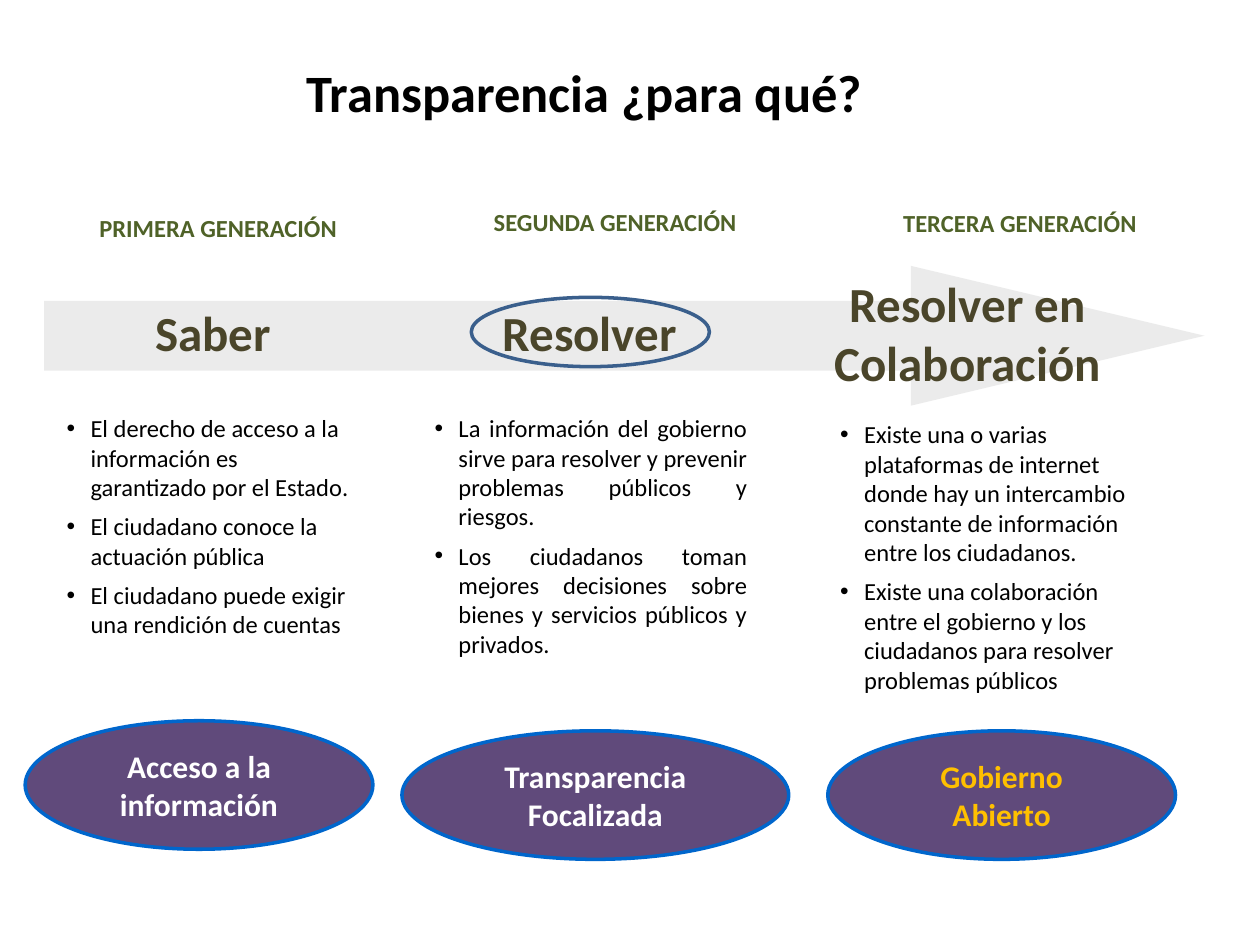
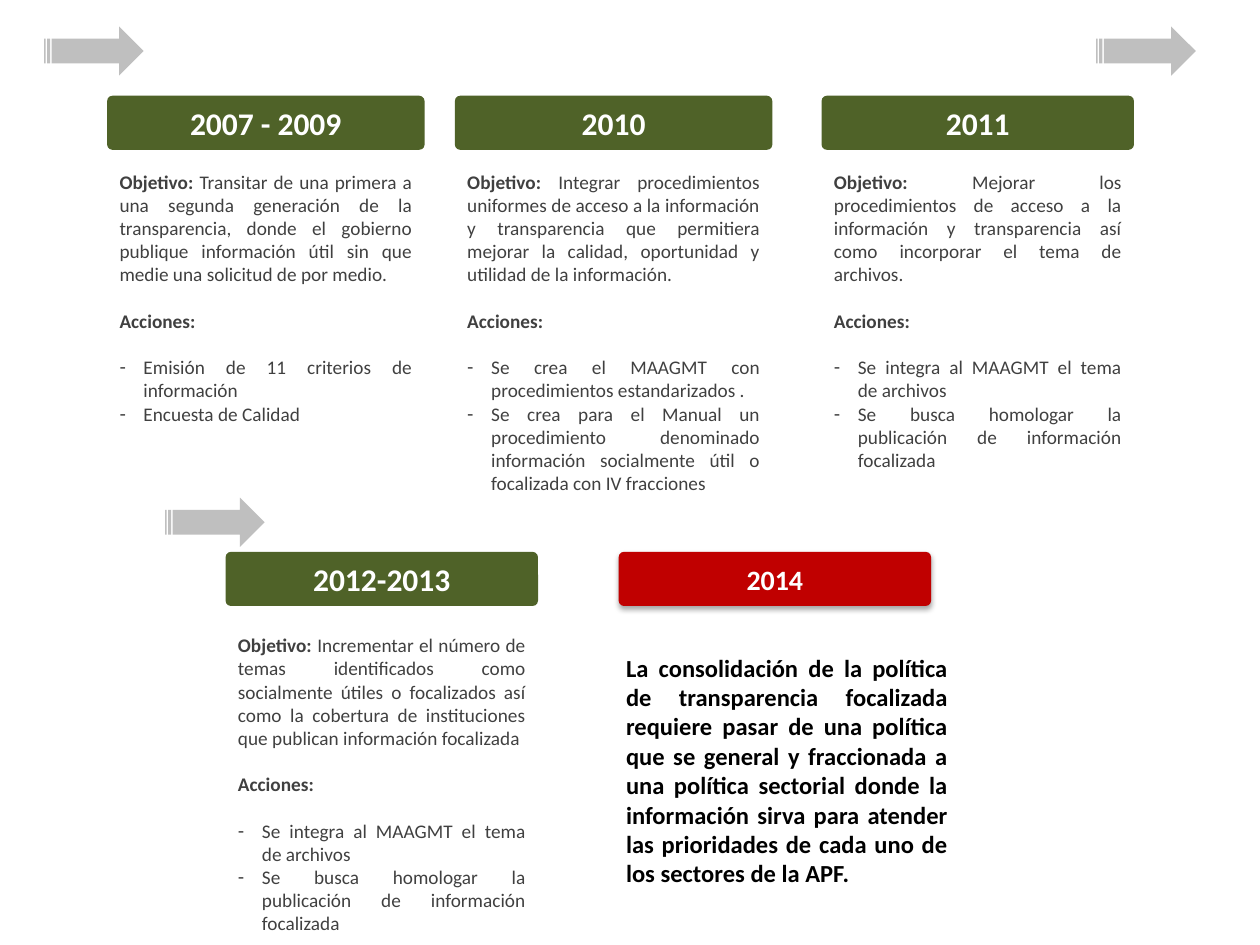
from lxml import etree
from pptx import Presentation
from pptx.dml.color import RGBColor
from pptx.enum.shapes import MSO_SHAPE
from pptx.enum.text import MSO_ANCHOR, PP_ALIGN
from pptx.oxml.ns import qn
from pptx.util import Inches, Pt

LEFT, MID, JUST = PP_ALIGN.LEFT, PP_ALIGN.CENTER, PP_ALIGN.JUSTIFY
TOP, CORE = MSO_ANCHOR.TOP, MSO_ANCHOR.MIDDLE
ARROW, STRIPED = MSO_SHAPE.RIGHT_ARROW, MSO_SHAPE.STRIPED_RIGHT_ARROW
OVAL, ROUND = MSO_SHAPE.OVAL, MSO_SHAPE.ROUNDED_RECTANGLE

FONT = "Calibri"
BLACK = RGBColor(0x00, 0x00, 0x00)
WHITE = RGBColor(0xFF, 0xFF, 0xFF)
GOLD = RGBColor(0xFF, 0xC0, 0x00)
GREEN = RGBColor(0x4F, 0x62, 0x28)
RED = RGBColor(0xC0, 0x00, 0x00)
PURPLE = RGBColor(0x60, 0x4A, 0x7B)
BLUE = RGBColor(0x00, 0x66, 0xCC)
NAVY = RGBColor(0x3A, 0x5F, 0x8C)
BROWN = RGBColor(0x4A, 0x45, 0x2A)
DARK = RGBColor(0x40, 0x40, 0x40)
SILVER = RGBColor(0xC0, 0xC0, 0xC0)
GREY = RGBColor(0xBF, 0xBF, 0xBF)

HANG = Inches(0.19)
LINE = 13.4

STAGES = [
    dict(label=("PRIMERA GENERACIÓN", (0.69, 1.64, 2.26, 0.48)),
         verb=("Saber", 0.51),
         notes=(["El derecho de acceso a la información es garantizado por el Estado.",
                 "El ciudadano conoce la actuación pública",
                 "El ciudadano puede exigir una rendición de cuentas"],
                (0.43, 3.23, 2.52, 1.26), LEFT),
         goal=("Acceso a la información", (0.2, 5.72, 2.76, 1.02), WHITE)),
    dict(label=("SEGUNDA GENERACIÓN", (3.82, 1.59, 2.26, 0.48)),
         verb=("Resolver", 3.5),
         notes=(["La información del gobierno sirve para resolver y prevenir "
                 "problemas públicos y riesgos.",
                 "Los ciudadanos toman mejores decisiones sobre bienes y "
                 "servicios públicos y privados."],
                (3.35, 3.23, 2.68, 1.26), JUST),
         goal=("Transparencia Focalizada", (3.19, 5.8, 3.07, 1.02), WHITE)),
    dict(label=("TERCERA GENERACIÓN", (7.07, 1.6, 2.26, 0.48)),
         verb=("Resolver en\nColaboración", 6.5),
         notes=(["Existe una o varias plataformas de internet donde hay un "
                 "intercambio constante de información entre los ciudadanos.",
                 "Existe una colaboración entre el gobierno y los ciudadanos "
                 "para resolver problemas públicos"],
                (6.57, 3.28, 2.64, 1.26), LEFT),
         goal=("Gobierno Abierto", (6.57, 5.8, 2.76, 1.02), GOLD)),
]

MERGE = ["Se integra al MAAGMT el tema de archivos",
         "Se busca homologar la publicación de información focalizada"]
YEARS = [
    ("2007 - 2009", (0.85, 0.76, 2.52, 2.65),
     "Transitar de una primera a una segunda generación de la transparencia, donde el "
     "gobierno publique información útil sin que medie una solicitud de por medio.",
     ["Emisión de 11 criterios de información", "Encuesta de Calidad"]),
    ("2010", (3.61, 0.76, 2.52, 3.25),
     "Integrar procedimientos uniformes de acceso a la información y transparencia que "
     "permitiera mejorar la calidad, oportunidad y utilidad de la información.",
     ["Se crea el MAAGMT con procedimientos estandarizados .",
      "Se crea para el Manual un procedimiento denominado información socialmente "
      "útil o focalizada con IV fracciones"]),
    ("2011", (6.52, 0.76, 2.48, 3.05),
     "Mejorar los procedimientos de acceso a la información y transparencia así como "
     "incorporar el tema de archivos.", MERGE),
    ("2012-2013", (1.79, 4.38, 2.48, 3.1),
     "Incrementar el número de temas identificados como socialmente útiles o focalizados "
     "así como la cobertura de instituciones que publican información focalizada", MERGE),
]
CLOSING = ("La consolidación de la política de transparencia focalizada requiere pasar de una "
           "política que se general y fraccionada a una política sectorial donde la "
           "información sirva para atender las prioridades de cada uno de los sectores de la APF.")


def place(box):
    """Turn a box in inches into lengths."""
    return [Inches(v) for v in box]


def draw(slide, kind, box, fill=None, line=None):
    """Add a flat preset shape."""
    shape = slide.shapes.add_shape(kind, *place(box))
    shape.shadow.inherit = False
    if fill is None:
        shape.fill.background()
    else:
        shape.fill.solid()
        shape.fill.fore_color.rgb = fill
    if line is None:
        shape.line.fill.background()
    else:
        shape.line.color.rgb = line
        shape.line.width = Pt(2)
    return shape


def frame(slide, box):
    """Add an empty text box."""
    return slide.shapes.add_textbox(*place(box))


def write(shape, text, size=14, color=BLACK, bold=False, align=LEFT,
          anchor=TOP, wrap=True):
    """Write each line of the text as a paragraph."""
    body = shape.text_frame
    body.word_wrap = wrap
    body.vertical_anchor = anchor
    for num, part in enumerate(text.split("\n")):
        para = body.paragraphs[0] if num == 0 else body.add_paragraph()
        para.alignment = align
        run = para.add_run()
        run.text = part
        font = run.font
        font.name, font.size, font.bold = FONT, Pt(size), bold
        font.color.rgb = color
    return body.paragraphs


def add_mark(para, mark):
    """Give a paragraph a hanging bullet."""
    props = para._p.get_or_add_pPr()
    props.set("marL", str(HANG))
    props.set("indent", str(-HANG))
    etree.SubElement(props, qn("a:buFont"), typeface="Arial")
    etree.SubElement(props, qn("a:buChar"), char=mark)


def fade(shape, percent):
    """Make a solid fill partly clear."""
    tint = shape._element.spPr.find(qn("a:solidFill"))[0]
    etree.SubElement(tint, qn("a:alpha"), val=str(percent * 1000))


def lift(shape):
    """Give a shape a soft shadow below it."""
    effect = shape._element.spPr.find(qn("a:effectLst"))
    shade = etree.SubElement(effect, qn("a:outerShdw"), blurRad=str(Pt(3.1)),
                             dist=str(Pt(1.8)), dir="5400000", rotWithShape="0")
    tint = etree.SubElement(shade, qn("a:srgbClr"), val=str(BLACK))
    etree.SubElement(tint, qn("a:alpha"), val="35000")


def add_stage(slide, label, verb, notes, goal):
    """Place one generation with its label, verb, notes and goal."""
    text, box = label
    write(frame(slide, box), text, color=GREEN, bold=True)
    text, left = verb
    write(frame(slide, (left, 2.36, 2.36, 0.55)), text, size=28, color=BROWN,
          bold=True, align=MID, anchor=CORE, wrap=False)
    items, box, align = notes
    paras = write(frame(slide, box), "\n".join(items), align=align)
    for num, para in enumerate(paras):
        para.space_before = Pt(5.6 if num else 0)
        add_mark(para, "•")
    text, box, color = goal
    write(draw(slide, OVAL, box, PURPLE, BLUE), text, size=18, color=color,
          bold=True, align=MID, anchor=CORE)


def add_banner(slide, box, year, fill=GREEN, size=18):
    """Place a year banner along the top of a box."""
    left, top, width, _ = box
    shape = draw(slide, ROUND, (left, top, width, 0.43), fill)
    shape.adjustments[0] = 0.1
    write(shape, year, size=size, color=WHITE, bold=True, align=MID, anchor=CORE)
    return shape


def add_year(slide, year, box, aim, acts):
    """Place a banner with its aim and actions below."""
    add_banner(slide, box, year)
    left, top, width, height = box
    gap = 0.6 if top > 4 else 0.54
    area = frame(slide, (left, top + gap, width, height - gap))
    paras = write(area, "\n".join(["Objetivo: ", "Acciones:"] + acts),
                  size=11, color=DARK, align=JUST)
    for para in paras[:2]:
        para.runs[0].font.bold = True
    run = paras[0].add_run()
    run.text = aim
    run.font.name, run.font.size = FONT, Pt(11)
    run.font.color.rgb = DARK
    for para in paras[1:3]:
        para.space_before = Pt(LINE)
    for para in paras[2:]:
        add_mark(para, "-")


def build_stages(slide):
    """Build the slide of three generations."""
    arrow = draw(slide, ARROW, (0.35, 2.11, 9.21, 1.11), SILVER)
    arrow.adjustments[1] = 2.1
    fade(arrow, 30)
    write(frame(slide, (0.5, 0.3, 8.28, 0.85)), "Transparencia ¿para qué?",
          size=30, bold=True, align=MID, anchor=CORE)
    draw(slide, OVAL, (3.74, 2.36, 1.89, 0.55), line=NAVY)
    for stage in STAGES:
        add_stage(slide, **stage)


def build_years(slide):
    """Build the slide of yearly aims."""
    for year in YEARS:
        add_year(slide, *year)
    lift(add_banner(slide, (4.91, 4.38, 2.48, 0.43), "2014", fill=RED, size=16))
    write(frame(slide, (4.87, 5.13, 2.75, 2)), CLOSING, bold=True, align=JUST)
    for left, top in [(0.35, 0.21), (1.31, 3.95), (8.7, 0.21)]:
        draw(slide, STRIPED, (left, top, 0.79, 0.39), GREY)


def main():
    """Build and save the slides."""
    deck = Presentation()
    deck.slide_width, deck.slide_height = Inches(10), Inches(7.5)
    for build in (build_stages, build_years):
        build(deck.slides.add_slide(deck.slide_layouts[6]))
    deck.save("out.pptx")


if __name__ == "__main__":
    main()
